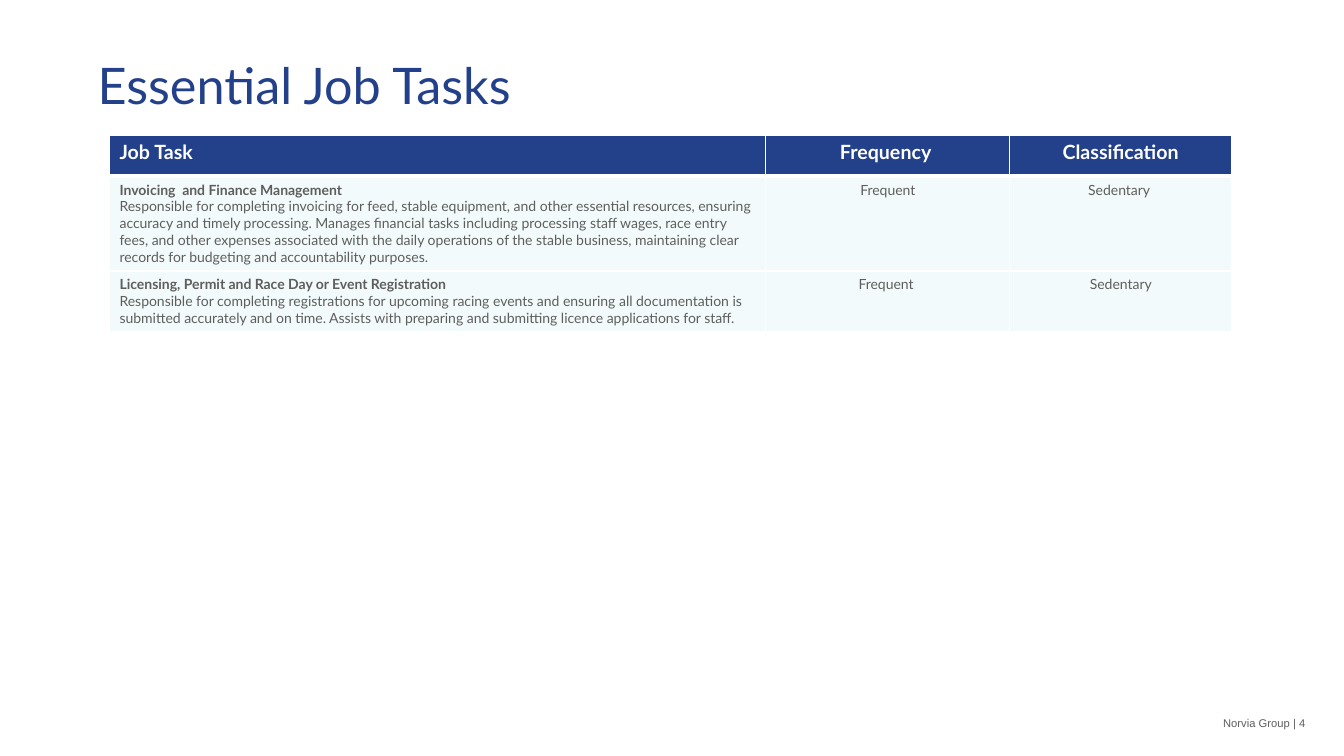
import pptx
import pptx.util
import pptx.dml.color
import pptx.enum.text
from lxml import etree
from pptx.oxml.ns import qn

Cm, Pt = pptx.util.Cm, pptx.util.Pt
RGBColor = pptx.dml.color.RGBColor
ALIGN = pptx.enum.text.PP_ALIGN

# Content
TITLE = "Essential Job Tasks"
FOOTER = "Norvia Group | 4"
HEADINGS = ("Job Task", "Frequency ", "Classification")
TASKS = [
    ("Invoicing  and Finance Management",
     "Responsible for completing invoicing for feed, stable equipment, and other essential "
     "resources, ensuring accuracy and timely processing. Manages financial tasks including "
     "processing staff wages, race entry fees, and other expenses associated with the daily "
     "operations of the stable business, maintaining clear records for budgeting and "
     "accountability purposes.",
     "Frequent", "Sedentary "),
    ("Licensing, Permit and Race Day or Event Registration",
     "Responsible for completing registrations for upcoming racing events and ensuring all "
     "documentation is submitted accurately and on time. Assists with preparing and submitting "
     "licence applications for staff.",
     "Frequent ", "Sedentary"),
]

# Style
NAVY = RGBColor(0x23, 0x40, 0x8B)
TEAL = RGBColor(0x24, 0xA8, 0xC0)
GREY = RGBColor(0x5E, 0x5E, 0x5E)
WHITE = RGBColor(0xFF, 0xFF, 0xFF)
TEAL_OPACITY = 5
COLUMN_WIDTHS = (16.54, 6.15, 5.59)
ROW_HEIGHTS = (1.04, 2.39, 1.5)


def style(paragraph, text, size, color, font="Lato", bold=False, align=ALIGN.LEFT):
    paragraph.text = text
    paragraph.alignment = align
    paragraph.font.name = font
    paragraph.font.size = Pt(size)
    paragraph.font.bold = bold
    paragraph.font.color.rgb = color


def add_text(slide, box, *args, **kwargs):
    frame = slide.shapes.add_textbox(*map(Cm, box)).text_frame
    frame.word_wrap = True
    style(frame.paragraphs[0], *args, **kwargs)


def add_borders(cell, bottom):
    properties = cell._tc.get_or_add_tcPr()
    for index, (side, width) in enumerate((("L", 1), ("R", 1), ("T", 1), ("B", bottom))):
        line = etree.Element(qn(f"a:ln{side}"), w=str(Pt(width)))
        fill = etree.SubElement(line, qn("a:solidFill"))
        etree.SubElement(fill, qn("a:srgbClr"), val=str(WHITE))
        properties.insert(index, line)


def fill_cell(cell, color, opacity=100):
    cell.fill.solid()
    cell.fill.fore_color.rgb = color
    if opacity < 100:
        tint = cell._tc.tcPr.find(".//" + qn("a:srgbClr"))
        etree.SubElement(tint, qn("a:alpha"), val=str(opacity * 1000))


presentation = pptx.Presentation()
presentation.slide_width, presentation.slide_height = Cm(33.87), Cm(19.05)
slide = presentation.slides.add_slide(presentation.slide_layouts[6])

# Title and footer
add_text(slide, (2.21, 1.24, 16.94, 1.8), TITLE, 36, NAVY)
add_text(slide, (16.21, 17.93, 16.94, 0.61), FOOTER, 8, GREY, font="Arial", align=ALIGN.RIGHT)

# Table frame
table = slide.shapes.add_table(
    len(ROW_HEIGHTS), len(COLUMN_WIDTHS), Cm(2.76), Cm(3.4),
    Cm(sum(COLUMN_WIDTHS)), Cm(sum(ROW_HEIGHTS))).table
for column, width in zip(table.columns, COLUMN_WIDTHS):
    column.width = Cm(width)
for row, height in zip(table.rows, ROW_HEIGHTS):
    row.height = Cm(height)

# Heading row
for index, heading in enumerate(HEADINGS):
    cell = table.cell(0, index)
    style(cell.text_frame.paragraphs[0], heading, 14, WHITE, bold=True,
          align=ALIGN.CENTER if index else ALIGN.LEFT)
    fill_cell(cell, NAVY)
    add_borders(cell, bottom=3)

# Task rows
for number, (name, description, *ratings) in enumerate(TASKS, start=1):
    task_frame = table.cell(number, 0).text_frame
    style(task_frame.paragraphs[0], name, 10, GREY, bold=True)
    style(task_frame.add_paragraph(), description, 10, GREY)
    for index, rating in enumerate(ratings, start=1):
        style(table.cell(number, index).text_frame.paragraphs[0], rating, 10, GREY,
              align=ALIGN.CENTER)
    for cell in table.rows[number].cells:
        fill_cell(cell, TEAL, TEAL_OPACITY)
        add_borders(cell, bottom=1)
    if number == 1:
        for cell in table.rows[number].cells:
            cell._tc.tcPr.find(qn("a:lnT")).set("w", str(Pt(3)))

presentation.save("out.pptx")
